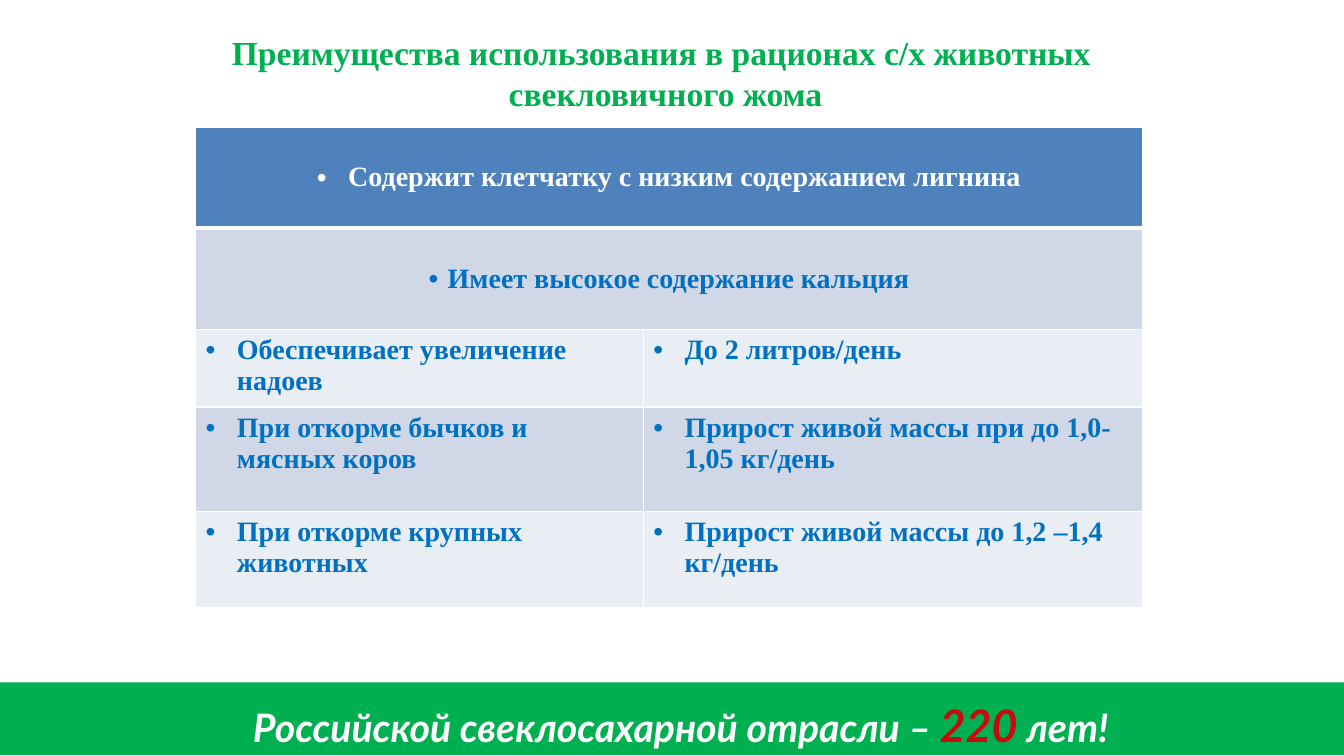
from lxml import etree
from pptx import Presentation
from pptx.dml.color import RGBColor
from pptx.enum.shapes import MSO_SHAPE
from pptx.enum.text import MSO_ANCHOR, PP_ALIGN
from pptx.oxml.ns import qn
from pptx.util import Inches, Pt

CENTER, LEFT = PP_ALIGN.CENTER, PP_ALIGN.LEFT
MIDDLE, TOP = MSO_ANCHOR.MIDDLE, MSO_ANCHOR.TOP
RECTANGLE = MSO_SHAPE.RECTANGLE

GREEN = RGBColor(0x00, 0xB0, 0x50)
RED = RGBColor(0xC8, 0x0B, 0x0E)
WHITE = RGBColor(0xFF, 0xFF, 0xFF)
BLUE_TEXT = RGBColor(0x00, 0x70, 0xC0)
HEADER_FILL = RGBColor(0x4F, 0x81, 0xBD)
BAND_FILLS = [RGBColor(0xE9, 0xED, 0xF4), RGBColor(0xD0, 0xD8, 0xE8)]
SERIF, SANS = "Times New Roman", "Lato"

TITLE = "Преимущества использования в рационах с/х животных \vсвекловичного жома"
SLOGAN = [  # text, size, colour
    ("Российской свеклосахарной отрасли – ", 28, WHITE),
    ("220", 32, RED),
    (" лет!", 28, WHITE),
]
# One text in a row spans both columns.
ROWS = [
    ["Содержит клетчатку с низким содержанием лигнина"],
    ["Имеет высокое содержание кальция"],
    ["Обеспечивает увеличение надоев", "До 2 литров/день"],
    ["При откорме бычков и мясных коров",
     "Прирост живой массы при до 1,0-1,05 кг/день"],
    ["При откорме крупных животных", "Прирост живой массы до 1,2 –1,4 кг/день"],
]
ROW_HEIGHTS = [1, 1.01, 0.76, 1.04, 0.95]
COLUMN_WIDTHS = [4.44, 4.95]
SLIDE_WIDTH, SLIDE_HEIGHT = 13.33, 7.5
BANNER_TOP, BANNER_HEIGHT = 6.77, 0.72


def add_text_box(slide, left, top, width, height, anchor):
    box = slide.shapes.add_textbox(
        Inches(left), Inches(top), Inches(width), Inches(height))
    box.text_frame.word_wrap = True
    box.text_frame.vertical_anchor = anchor
    return box.text_frame.paragraphs[0]


def style(font, name, size, color):
    font.name, font.size, font.bold = name, Pt(size), True
    font.color.rgb = color


def add_bullet(paragraph, indent):
    properties = paragraph._p.get_or_add_pPr()
    properties.set("marL", str(Inches(indent)))
    properties.set("indent", str(-Inches(indent)))
    font = etree.SubElement(properties, qn("a:buFont"))
    font.set("typeface", "Arial")
    etree.SubElement(properties, qn("a:buChar")).set("char", "•")


def set_borders(cell, top, bottom):
    properties = cell._tc.get_or_add_tcPr()
    for side, width in (("L", 1), ("R", 1), ("T", top), ("B", bottom)):
        line = etree.SubElement(properties, qn("a:ln" + side))
        line.set("w", str(Pt(width)))
        fill = etree.SubElement(line, qn("a:solidFill"))
        etree.SubElement(fill, qn("a:srgbClr")).set("val", str(WHITE))


def add_title(slide):
    paragraph = add_text_box(slide, 1.55, 0.31, 10.1, 0.82, MIDDLE)
    paragraph.text = TITLE
    paragraph.alignment = CENTER
    style(paragraph.font, SERIF, 24, GREEN)


def add_benefits_table(slide):
    table = slide.shapes.add_table(
        len(ROWS), len(COLUMN_WIDTHS), Inches(1.94), Inches(1.26),
        Inches(sum(COLUMN_WIDTHS)), Inches(sum(ROW_HEIGHTS))).table
    for column, width in zip(table.columns, COLUMN_WIDTHS):
        column.width = Inches(width)
    for index, (texts, height) in enumerate(zip(ROWS, ROW_HEIGHTS)):
        table.rows[index].height = Inches(height)
        merged = len(texts) == 1
        if merged:
            table.cell(index, 0).merge(table.cell(index, 1))
        for cell in table.rows[index].cells:
            set_borders(cell, 3 if index == 1 else 1, 3 if index == 0 else 1)
            cell.fill.solid()
            cell.fill.fore_color.rgb = BAND_FILLS[index % 2] if index else HEADER_FILL
        for column, text in enumerate(texts):
            cell = table.cell(index, column)
            cell.vertical_anchor = MIDDLE if merged else TOP
            paragraph = cell.text_frame.paragraphs[0]
            paragraph.text = text
            paragraph.alignment = CENTER if merged else LEFT
            add_bullet(paragraph, 0.19 if index == 1 else 0.31)
            style(paragraph.font, SERIF, 20, BLUE_TEXT if index else WHITE)


def add_banner(slide):
    banner = slide.shapes.add_shape(
        RECTANGLE, 0, Inches(BANNER_TOP), Inches(SLIDE_WIDTH), Inches(BANNER_HEIGHT))
    banner.shadow.inherit = False
    banner.fill.solid()
    banner.fill.fore_color.rgb = GREEN
    banner.line.fill.background()
    paragraph = add_text_box(slide, 2.41, BANNER_TOP, 9.24, BANNER_HEIGHT, TOP)
    paragraph.line_spacing = 1.2
    for text, size, color in SLOGAN:
        run = paragraph.add_run()
        run.text = text
        style(run.font, SANS, size, color)
        run.font.italic = True


def main():
    presentation = Presentation()
    presentation.slide_width = Inches(SLIDE_WIDTH)
    presentation.slide_height = Inches(SLIDE_HEIGHT)
    slide = presentation.slides.add_slide(presentation.slide_layouts[6])
    add_title(slide)
    add_banner(slide)
    add_benefits_table(slide)
    presentation.save("out.pptx")


if __name__ == "__main__":
    main()
